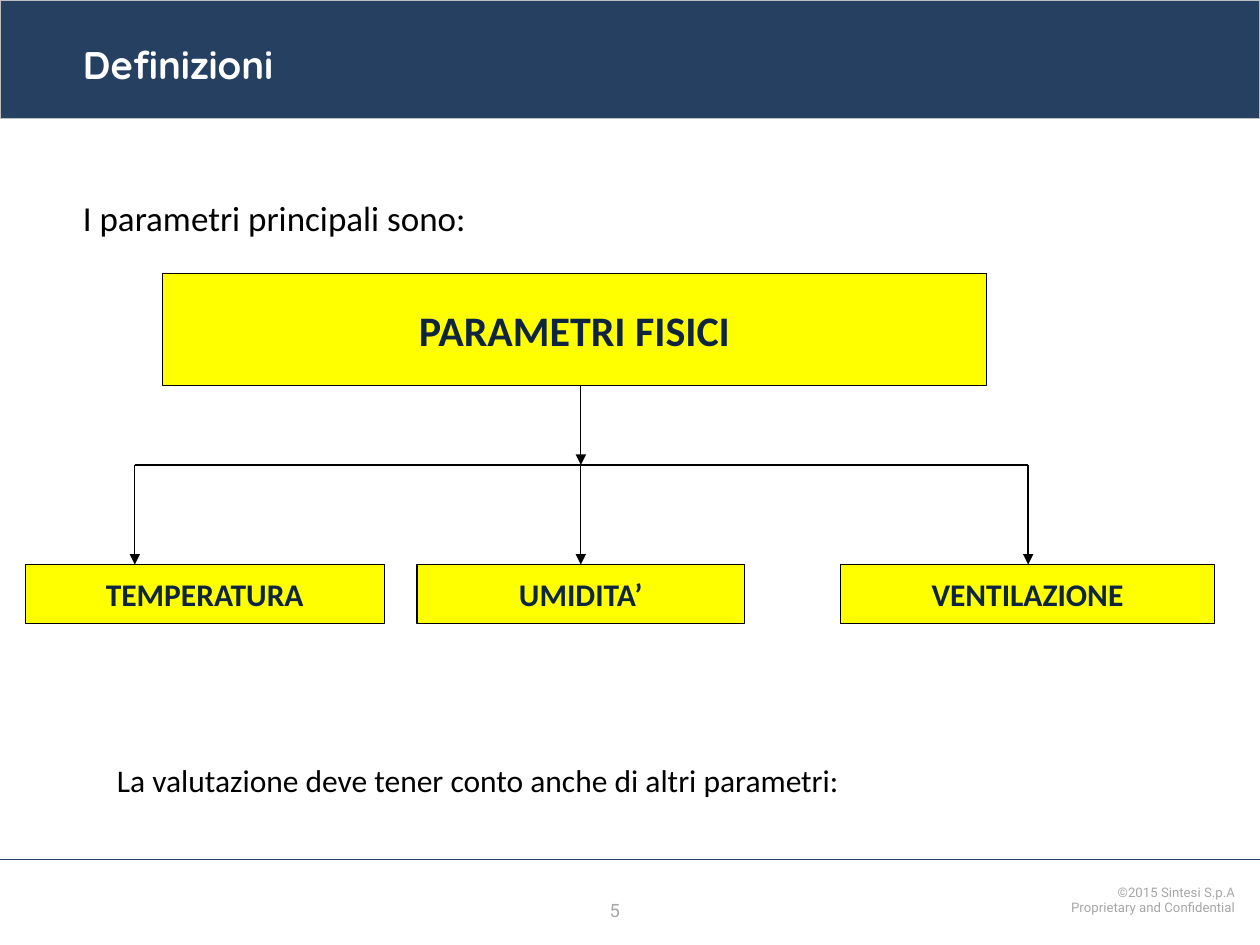
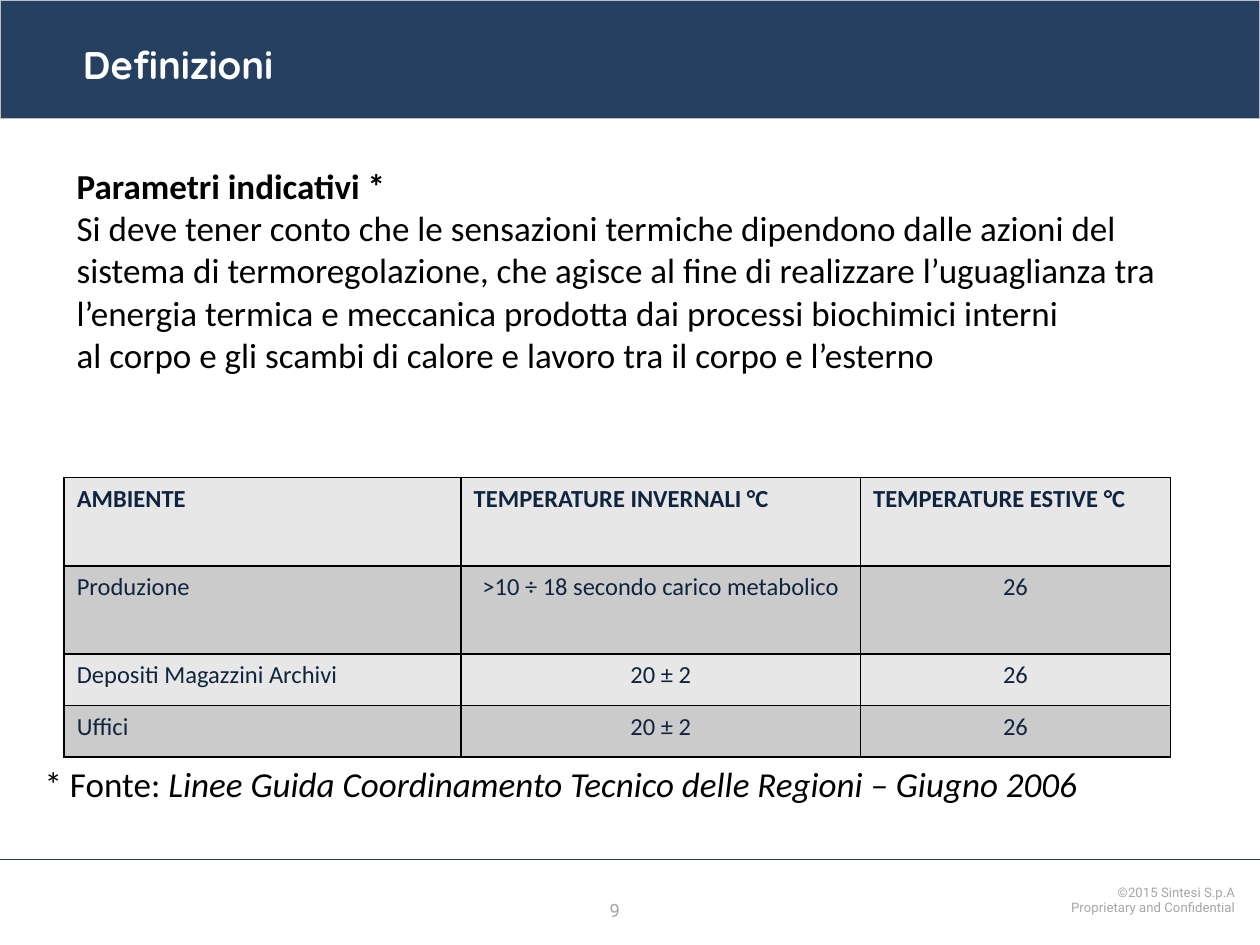
from lxml import etree
from pptx import Presentation
from pptx.dml.color import RGBColor
from pptx.enum import shapes, text
from pptx.oxml.ns import qn
from pptx.util import Inches, Pt

NAVY = RGBColor(0x25, 0x40, 0x61)
INK = RGBColor(0x0F, 0x24, 0x3E)
YELLOW = RGBColor(0xFF, 0xFF, 0x00)
BLACK = RGBColor(0, 0, 0)
WHITE = RGBColor(0xFF, 0xFF, 0xFF)
SILVER = RGBColor(0xBF, 0xBF, 0xBF)
GREY = RGBColor(0xA6, 0xA6, 0xA6)
ROW_LIGHT = RGBColor(0xE7, 0xE7, 0xE7)
ROW_DARK = RGBColor(0xCB, 0xCB, 0xCB)

LEFT, CENTER, RIGHT = text.PP_ALIGN.LEFT, text.PP_ALIGN.CENTER, text.PP_ALIGN.RIGHT
MIDDLE, TOP = text.MSO_ANCHOR.MIDDLE, text.MSO_ANCHOR.TOP


def write(frame, *paragraphs, size=20, font="Calibri", color=BLACK, bold=False,
          align=LEFT, spacing=None, anchor=TOP, wrap=True):
    """Fill a frame; a paragraph is a string or a list of (text, font overrides)."""
    frame.word_wrap = wrap
    frame.vertical_anchor = anchor
    for i, content in enumerate(paragraphs):
        paragraph = frame.add_paragraph() if i else frame.paragraphs[0]
        paragraph.alignment = align
        if spacing:
            paragraph.line_spacing = spacing
        for words, overrides in [(content, {})] if isinstance(content, str) else content:
            run = paragraph.add_run()
            run.text = words
            run.font.name, run.font.size = font, Pt(size)
            run.font.color.rgb, run.font.bold = color, bold
            for key, value in overrides.items():
                setattr(run.font, key, value)


def add_text(slide, box, *paragraphs, **style):
    label = slide.shapes.add_textbox(*map(Inches, box))
    write(label.text_frame, *paragraphs, **style)


def add_box(slide, box, fill, line):
    panel = slide.shapes.add_shape(shapes.MSO_SHAPE.RECTANGLE, *map(Inches, box))
    panel.shadow.inherit = False
    panel.fill.solid()
    panel.fill.fore_color.rgb = fill
    panel.line.color.rgb = line
    panel.line.width = Pt(0.75)
    return panel


def add_line(slide, start, end, color=BLACK, width=0.75, arrow=False):
    line = slide.shapes.add_connector(
        shapes.MSO_CONNECTOR.STRAIGHT, *map(Inches, (*start, *end)))
    line.line.color.rgb = color
    line.line.width = Pt(width)
    if arrow:
        etree.SubElement(line.line._get_or_add_ln(), qn("a:tailEnd"), type="triangle")
    etree.SubElement(line._element.spPr, qn("a:effectLst"))


def header(slide, box, title):
    left, top, width, _ = box
    add_box(slide, box, NAVY, SILVER)
    add_text(slide, (left + 0.56, top + 0.19, width - 1.38, 0.64), title,
             size=22, font="Quicksand", color=WHITE, bold=True, anchor=MIDDLE)


def footer(slide, box, number):
    left, top, width, _ = box
    add_line(slide, (left, top), (left + width, top), NAVY, 0.5)
    add_text(slide, (left + 4.74, top + 0.27, 0.52, 0.28), str(number),
             size=10.5, font="Roboto", color=GREY)
    add_text(slide, (left + width - 2.76, top + 0.16, 2.66, 0.34),
             "©2015 Sintesi S.p.A", "Proprietary and Confidential",
             size=7.5, font="Roboto", color=GREY, align=RIGHT, spacing=0.95)


def new_slide(deck, title, number):
    slide = deck.slides.add_slide(deck.slide_layouts[6])
    header(slide, (0, 0, 10, 0.94), title)
    footer(slide, (0, 6.82, 10, 0.68), number)
    return slide


def parameter_tree(slide, box, root, branches):
    """Root box on top, a horizontal bus, and one arrow to each branch box."""
    left, top, _, height = box
    root_height, branch_height = 0.89, 0.47
    bus, branch_top = top + 1.52, top + height - branch_height

    def node(name, offset, y, width, tall, size):
        panel = add_box(slide, (left + offset, y, width, tall), YELLOW, BLACK)
        write(panel.text_frame, name, size=size, color=INK, bold=True,
              align=CENTER, anchor=MIDDLE, wrap=False)

    node(root, 1.09, top, 6.54, root_height, 24)
    for name, offset, width, _ in branches:
        node(name, offset, branch_top, width, branch_height, 18)

    drops = [left + drop for *_, drop in branches]
    trunk = drops[len(drops) // 2]
    add_line(slide, (trunk, top + root_height), (trunk, bus), arrow=True)
    add_line(slide, (drops[0], bus), (drops[-1], bus))
    for x in drops:
        add_line(slide, (x, bus), (x, branch_top), arrow=True)


def border_cell(cell):
    properties = cell._tc.get_or_add_tcPr()
    for side in ("lnL", "lnR", "lnT", "lnB"):
        edge = etree.SubElement(properties, qn(f"a:{side}"), w=str(Pt(1)))
        fill = etree.SubElement(edge, qn("a:solidFill"))
        etree.SubElement(fill, qn("a:srgbClr"), val=str(BLACK))


def temperature_table(slide, box, widths, heights, rows):
    table = slide.shapes.add_table(len(rows), len(widths), *map(Inches, box)).table
    for column, width in zip(table.columns, widths):
        column.width = Inches(width)
    for r, (height, values) in enumerate(zip(heights, rows)):
        table.rows[r].height = Inches(height)
        for c, value in enumerate(values):
            cell = table.cell(r, c)
            border_cell(cell)
            cell.fill.solid()
            cell.fill.fore_color.rgb = ROW_DARK if r % 2 else ROW_LIGHT
            write(cell.text_frame, value, size=14, color=INK, bold=r == 0,
                  align=CENTER if r and c else LEFT)


def parameters_slide(deck):
    slide = new_slide(deck, "Definizioni", 5)
    add_text(slide, (0.56, 1.51, 3.27, 0.44), "I parametri principali sono:", wrap=False)
    # Branch: name, left offset, width, arrow offset
    parameter_tree(slide, (0.2, 2.17, 9.44, 2.78), "PARAMETRI FISICI", [
        ("TEMPERATURA", 0, 2.85, 0.87),
        ("UMIDITA’", 3.11, 2.6, 4.41),
        ("VENTILAZIONE", 6.47, 2.97, 7.96),
    ])
    add_text(slide, (0.83, 5.99, 6.14, 0.4),
             "La valutazione deve tener conto anche di altri parametri:",
             size=18, wrap=False)


def temperatures_slide(deck):
    slide = new_slide(deck, "Definizioni", 9)
    temperature_table(
        slide, (0.51, 3.79, 8.78, 2.22), (3.15, 3.17, 2.46), (0.7, 0.7, 0.41, 0.41), [
            ("AMBIENTE", "TEMPERATURE INVERNALI °C", "TEMPERATURE ESTIVE °C"),
            ("Produzione", ">10 ÷ 18 secondo carico metabolico", "26"),
            ("Depositi Magazzini Archivi", "20 ± 2", "26"),
            ("Uffici", "20 ± 2", "26"),
        ])
    # Source note
    add_text(slide, (0, 6, 8.91, 0.44),
             [("* Fonte: ", {}),
              ("Linee Guida Coordinamento Tecnico delle Regioni – Giugno 2006",
               {"italic": True})],
             align=CENTER)
    # Introduction
    add_text(slide, (0.51, 1.26, 9, 1.78),
             [("Parametri indicativi *", {"bold": True})],
             "Si deve tener conto che le sensazioni termiche dipendono dalle azioni del "
             "sistema di termoregolazione, che agisce al fine di realizzare l’uguaglianza "
             "tra l’energia termica e meccanica prodotta dai processi biochimici interni",
             "al corpo e gli scambi di calore e lavoro tra il corpo e l’esterno")


def main():
    deck = Presentation()
    deck.slide_width, deck.slide_height = Inches(10), Inches(7.5)
    parameters_slide(deck)
    temperatures_slide(deck)
    deck.save("out.pptx")


if __name__ == "__main__":
    main()
